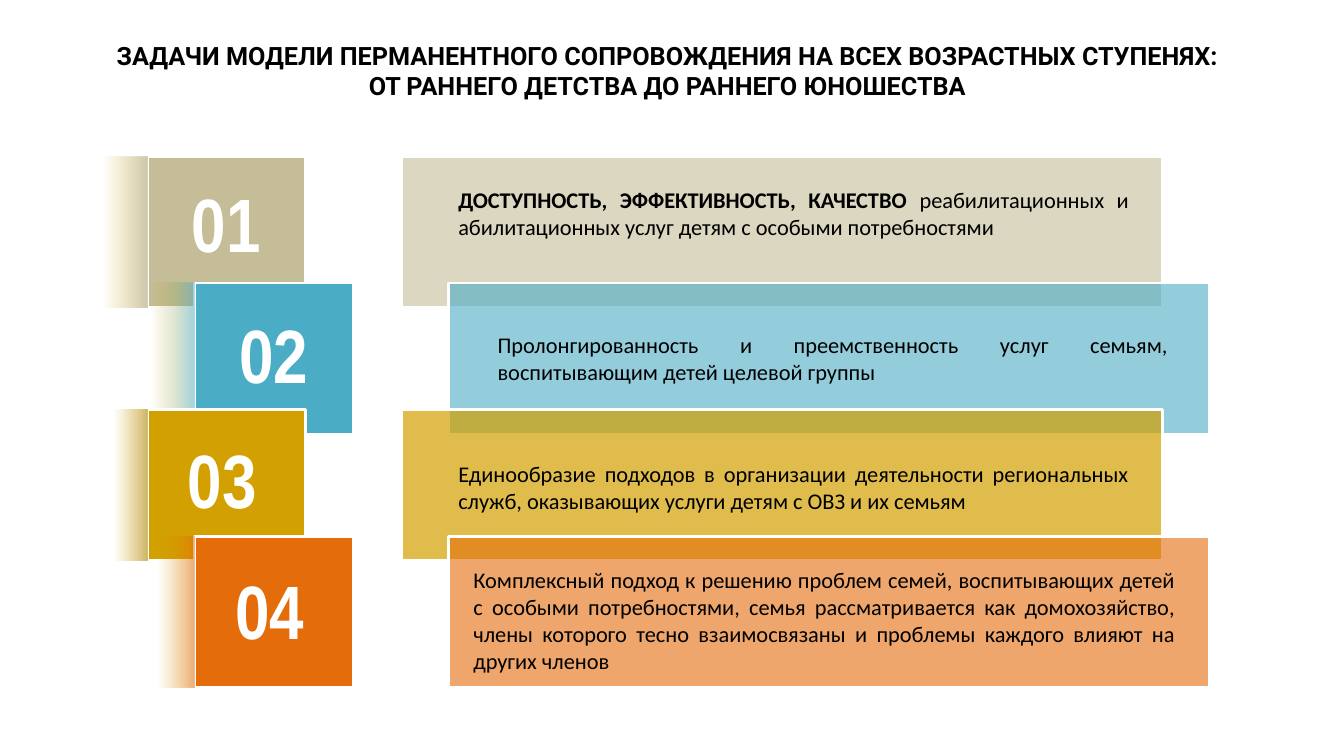
from dataclasses import dataclass

from lxml.etree import SubElement
from pptx import Presentation
from pptx.dml.color import RGBColor
from pptx.enum.shapes import MSO_SHAPE
from pptx.enum.text import MSO_ANCHOR, PP_ALIGN
from pptx.oxml.ns import qn
from pptx.shapes.autoshape import Shape
from pptx.slide import Slide
from pptx.text.text import _Paragraph as Paragraph
from pptx.util import Cm, Pt


@dataclass(frozen=True)
class Theme:
    white: str = "FFFFFF"
    black: str = "000000"
    gold: str = "D7A200"
    title_font: str = "Roboto"
    number_font: str = "Arial Narrow"
    body_font: str = "Calibri"
    title_size: int = 18
    number_size: int = 54
    body_size: int = 16
    outline: int = 2


@dataclass(frozen=True)
class Area:
    left: float
    top: float
    width: float
    height: float


@dataclass(frozen=True)
class Task:
    color: str
    panel_opacity: int
    fade_color: str
    fade_opacity: int
    fade_end: int
    number_left: float
    number_top: float
    text_area: Area
    lead: str
    text: str


THEME = Theme()
TITLE_AREA = Area(0.41, 0.89, 32.82, 1.8)
TITLE_LINES = (
    "ЗАДАЧИ МОДЕЛИ ПЕРМАНЕНТНОГО СОПРОВОЖДЕНИЯ НА ВСЕХ ВОЗРАСТНЫХ СТУПЕНЯХ:",
    "ОТ РАННЕГО ДЕТСТВА ДО РАННЕГО ЮНОШЕСТВА",
)
FIRST_TOP, ROW_STEP, ROW_HEIGHT = 3.94, 3.19, 3.81
FIRST_LEFT, ROW_SHIFT = 3.71, 1.2
FADE_WIDTH, TILE_WIDTH = 3.71, 3.99
PANEL_OFFSET, PANEL_WIDTH = 6.4, 19.18
NUMBER_WIDTH, NUMBER_HEIGHT = 2.62, 2.11

TASKS = (
    Task("C4BD97", 60, "948A54", 48, 30, 4.39, 4.78, Area(11.3, 4.57, 17.4, 1.63),
         "ДОСТУПНОСТЬ, ЭФФЕКТИВНОСТЬ, КАЧЕСТВО ",
         "реабилитационных и абилитационных услуг детям с особыми потребностями"),
    Task("4BACC6", 60, "4BACC6", 53, 30, 5.59, 8.08, Area(12.29, 8.23, 17.4, 1.63), "",
         "Пролонгированность и преемственность услуг семьям, "
         "воспитывающим детей целевой группы"),
    Task("D2A000", 70, "AC8300", 60, 23, 4.29, 11.23, Area(11.3, 11.48, 17.4, 1.63), "",
         "Единообразие подходов в организации деятельности региональных служб, "
         "оказывающих услуги детям с ОВЗ и их семьям"),
    Task("E46C0A", 60, "E46C0A", 57, 25, 5.49, 14.53, Area(11.68, 14.15, 18.19, 3.0), "",
         "Комплексный подход к решению проблем семей, воспитывающих детей с особыми "
         "потребностями, семья рассматривается как домохозяйство, члены которого тесно "
         "взаимосвязаны и проблемы каждого влияют на других членов"),
)


def style_runs(paragraph: Paragraph, font: str, size: int, color: str, bold: bool) -> None:
    for span in paragraph.runs:
        span.font.name = font
        span.font.size = Pt(size)
        span.font.bold = bold
        span.font.color.rgb = RGBColor.from_string(color)


def add_block(page: Slide, area: Area) -> Shape:
    block = page.shapes.add_shape(MSO_SHAPE.RECTANGLE, Cm(area.left), Cm(area.top),
                                  Cm(area.width), Cm(area.height))
    block.shadow.inherit = False
    return block


def add_panel(page: Slide, area: Area, color: str, opacity: int = 100) -> None:
    panel = add_block(page, area)
    panel.fill.solid()
    panel.fill.fore_color.rgb = RGBColor.from_string(color)
    panel.line.color.rgb = RGBColor.from_string(THEME.white)
    panel.line.width = Pt(THEME.outline)
    if opacity < 100:
        tint = panel.fill._xPr.find(qn("a:solidFill")).find(qn("a:srgbClr"))
        SubElement(tint, qn("a:alpha"), val=str(opacity * 1000))


def add_fade(page: Slide, area: Area, task: Task) -> None:
    fade = add_block(page, area)
    fade.line.fill.background()
    fade.fill.gradient()
    gradient = fade.fill._xPr.find(qn("a:gradFill"))
    for child in list(gradient):
        gradient.remove(child)
    stops = SubElement(gradient, qn("a:gsLst"))
    for position, color, opacity in ((0, task.fade_color, task.fade_opacity),
                                     (task.fade_end, THEME.gold, 0)):
        stop = SubElement(stops, qn("a:gs"), pos=str(position * 1000))
        tint = SubElement(stop, qn("a:srgbClr"), val=color)
        SubElement(tint, qn("a:alpha"), val=str(opacity * 1000))
    SubElement(gradient, qn("a:lin"), ang=str(180 * 60000), scaled="0")


def add_text(page: Slide, area: Area, text: str, alignment: PP_ALIGN) -> Paragraph:
    box = page.shapes.add_textbox(Cm(area.left), Cm(area.top), Cm(area.width), Cm(area.height))
    box.text_frame.word_wrap = True
    box.text_frame.text = text
    paragraph = box.text_frame.paragraphs[0]
    paragraph.alignment = alignment
    return paragraph


def add_title(page: Slide) -> None:
    title = page.shapes.title
    title.left, title.top = Cm(TITLE_AREA.left), Cm(TITLE_AREA.top)
    title.width, title.height = Cm(TITLE_AREA.width), Cm(TITLE_AREA.height)
    title.text_frame.text = "\n".join(TITLE_LINES)
    title.text_frame.word_wrap = True
    title.text_frame.vertical_anchor = MSO_ANCHOR.TOP
    for paragraph in title.text_frame.paragraphs:
        paragraph.alignment = PP_ALIGN.CENTER
        style_runs(paragraph, THEME.title_font, THEME.title_size, THEME.black, True)


def add_task(page: Slide, index: int, task: Task) -> None:
    top = FIRST_TOP + index * ROW_STEP
    left = FIRST_LEFT + index % 2 * ROW_SHIFT
    add_panel(page, Area(left, top, TILE_WIDTH, ROW_HEIGHT), task.color)
    add_fade(page, Area(left - FADE_WIDTH, top, FADE_WIDTH, ROW_HEIGHT), task)
    add_panel(page, Area(left + PANEL_OFFSET, top, PANEL_WIDTH, ROW_HEIGHT),
              task.color, task.panel_opacity)

    number_area = Area(task.number_left, task.number_top, NUMBER_WIDTH, NUMBER_HEIGHT)
    number = add_text(page, number_area, f"{index + 1:02}", PP_ALIGN.CENTER)
    number.line_spacing = 0.8
    style_runs(number, THEME.number_font, THEME.number_size, THEME.white, True)

    paragraph = add_text(page, task.text_area, task.lead or task.text, PP_ALIGN.JUSTIFY)
    if task.lead:
        paragraph.add_run().text = task.text
    style_runs(paragraph, THEME.body_font, THEME.body_size, THEME.black, False)
    paragraph.runs[0].font.bold = bool(task.lead)


def main() -> None:
    deck = Presentation()
    deck.slide_width, deck.slide_height = Cm(33.87), Cm(19.05)
    page = deck.slides.add_slide(deck.slide_layouts[5])
    add_title(page)
    for index, task in enumerate(TASKS):
        add_task(page, index, task)
    deck.save("out.pptx")


if __name__ == "__main__":
    main()
